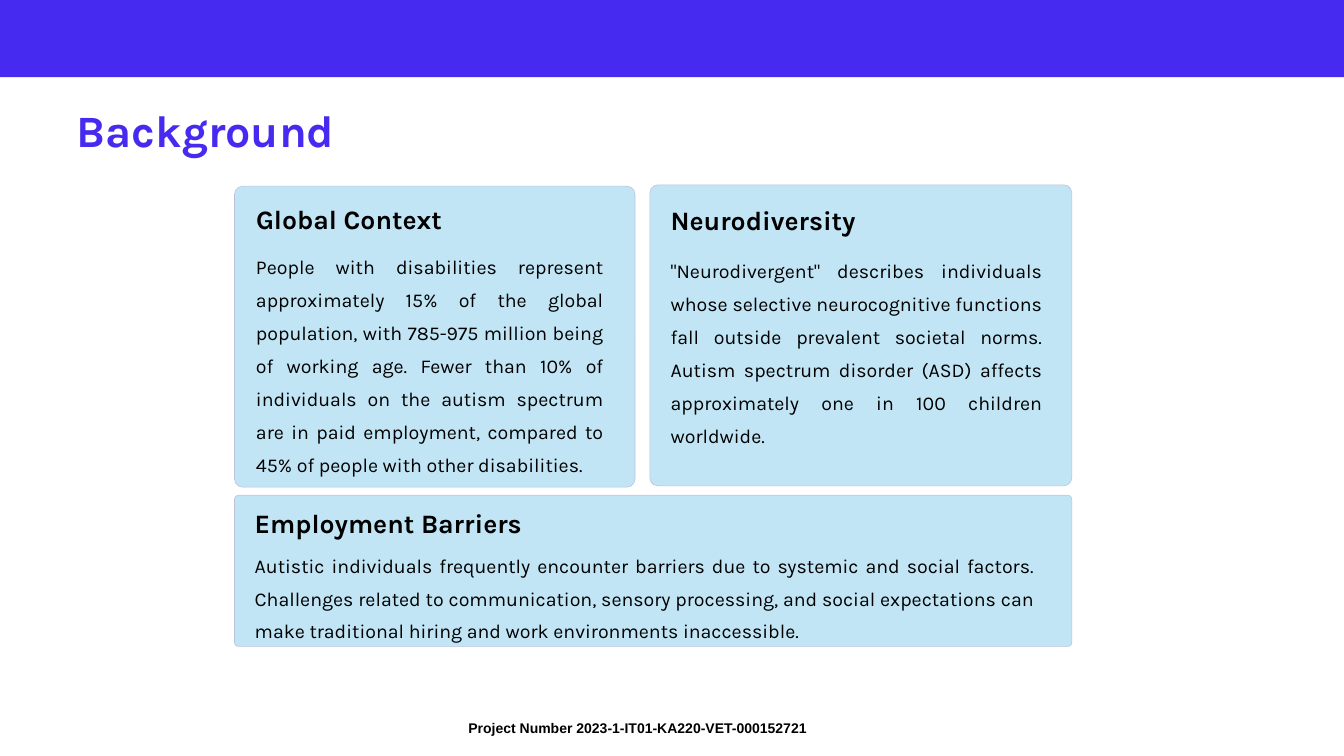
from pptx import Presentation
from pptx.dml.color import RGBColor
from pptx.enum.shapes import MSO_SHAPE
from pptx.enum.text import PP_ALIGN
from pptx.util import Inches, Pt

VIOLET = RGBColor(0x46, 0x2A, 0xF0)
SKY = RGBColor(0xC1, 0xE5, 0xF5)
EDGE = RGBColor(0xBB, 0xC2, 0xDC)
BLACK = RGBColor(0, 0, 0)
RECT = MSO_SHAPE.RECTANGLE
ROUND = MSO_SHAPE.ROUNDED_RECTANGLE
LEFT = PP_ALIGN.LEFT
JUSTIFY = PP_ALIGN.JUSTIFY

# Each card: box, heading offset, body offset, body size, heading, body
CARDS = [
    ((3.49, 7.37, 12.46, 2.25), (0.3, 0.15), (0.3, 0.73), (11.6, 1.97),
     "Employment Barriers",
     "Autistic individuals frequently encounter barriers due to systemic and "
     "social factors. Challenges related to communication, sensory processing, "
     "and social expectations can make traditional hiring and work environments "
     "inaccessible."),
    ((9.67, 2.75, 6.28, 4.48), (0.31, 0.26), (0.31, 0.97), (5.53, 2.55),
     "Neurodiversity",
     "\"Neurodivergent\" describes individuals whose selective neurocognitive "
     "functions fall outside prevalent societal norms. Autism spectrum disorder "
     "(ASD) affects approximately one in 100 children worldwide."),
    ((3.49, 2.77, 5.96, 4.48), (0.32, 0.23), (0.32, 0.89), (5.17, 2.72),
     "Global Context",
     "People with disabilities represent approximately 15% of the global "
     "population, with 785-975 million being of working age. Fewer than 10% of "
     "individuals on the autism spectrum are in paid employment, compared to "
     "45% of people with other disabilities."),
]


def add_text(slide, box, text, size, lead=None, bold=True, color=BLACK,
             face="Karla", align=LEFT):
    """Add one paragraph of text in a box without insets."""
    frame = slide.shapes.add_textbox(*map(Inches, box)).text_frame
    frame.word_wrap = True
    frame.margin_left = frame.margin_right = 0
    frame.margin_top = frame.margin_bottom = 0
    para = frame.paragraphs[0]
    para.alignment = align
    if lead:
        para.line_spacing = Pt(lead)
    run = para.add_run()
    run.text = text
    font = run.font
    font.name, font.size, font.bold = face, Pt(size), bold
    font.color.rgb = color


def add_panel(slide, kind, box, fill):
    """Add a flat filled shape and return it."""
    shape = slide.shapes.add_shape(kind, *map(Inches, box))
    shape.shadow.inherit = False
    shape.fill.solid()
    shape.fill.fore_color.rgb = fill
    shape.line.fill.background()
    return shape


def add_frame(slide):
    """Add the top band, the title and the footer."""
    add_text(slide, (6.97, 10.7, 5.4, 0.25),
             "Project Number 2023-1-IT01-KA220-VET-000152721", 15, face="Arial")
    add_panel(slide, RECT, (0, -0.02, 20, 1.17), VIOLET)
    add_text(slide, (1.14, 1.32, 15.98, 1.18), "Background", 48, 72.8,
             color=VIOLET)


def add_card(slide, box, head_at, body_at, body_size, head, body):
    """Add a rounded card with a heading and justified body text."""
    left, top, width, _ = box
    card = add_panel(slide, ROUND, box, SKY)
    card.adjustments[0] = 0.027
    card.line.color.rgb = EDGE
    card.line.width = Pt(0.6)
    dx, dy = head_at
    add_text(slide, (left + dx, top + dy, width - 2 * dx, 0.51), head, 28.5, 36)
    dx, dy = body_at
    add_text(slide, (left + dx, top + dy, *body_size), body, 21, 35.2,
             bold=False, align=JUSTIFY)


def main():
    """Build and save the slide."""
    deck = Presentation()
    deck.slide_width, deck.slide_height = Inches(20), Inches(11.25)
    slide = deck.slides.add_slide(deck.slide_layouts[6])
    add_frame(slide)
    for card in CARDS:
        add_card(slide, *card)
    deck.save("out.pptx")


if __name__ == "__main__":
    main()
